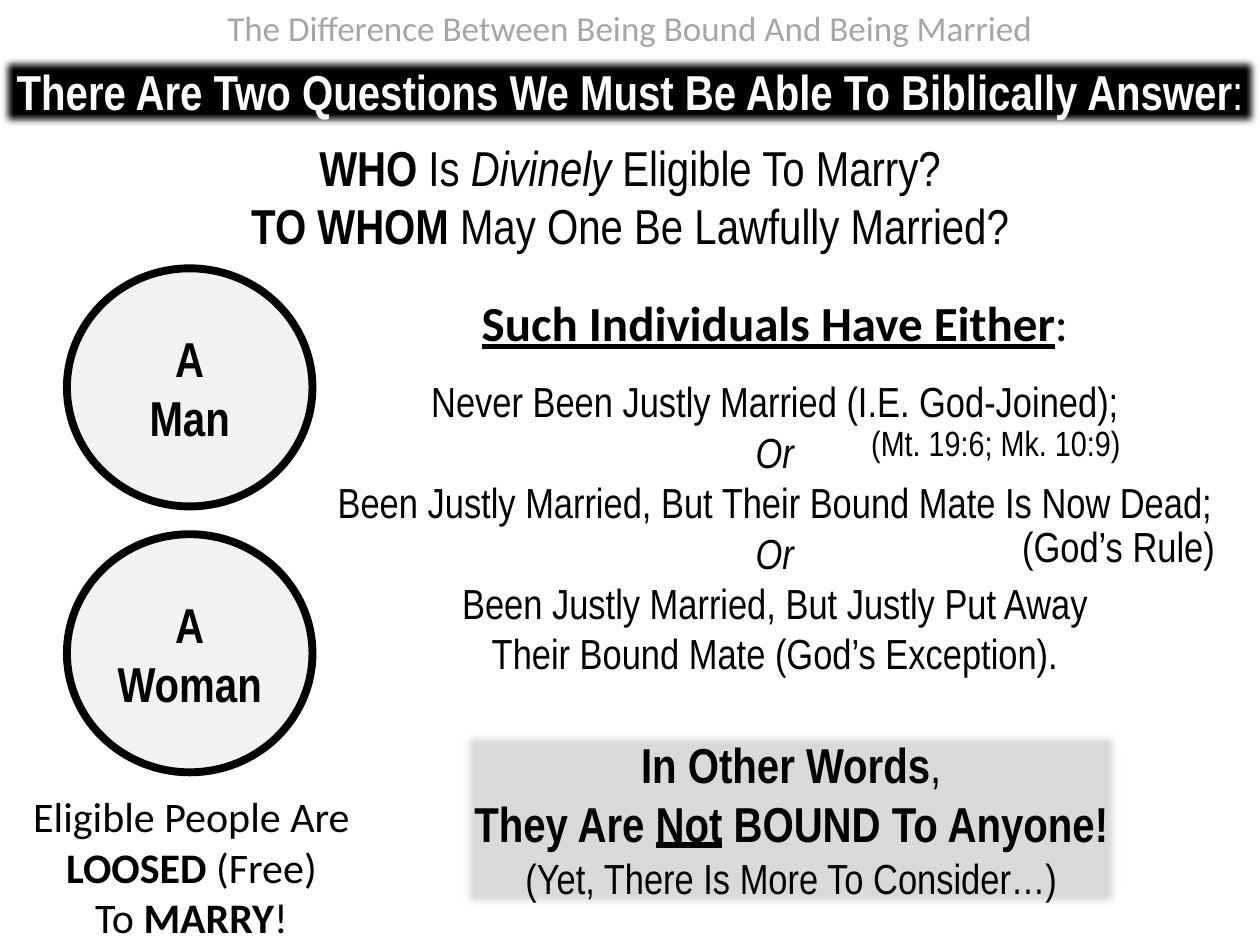
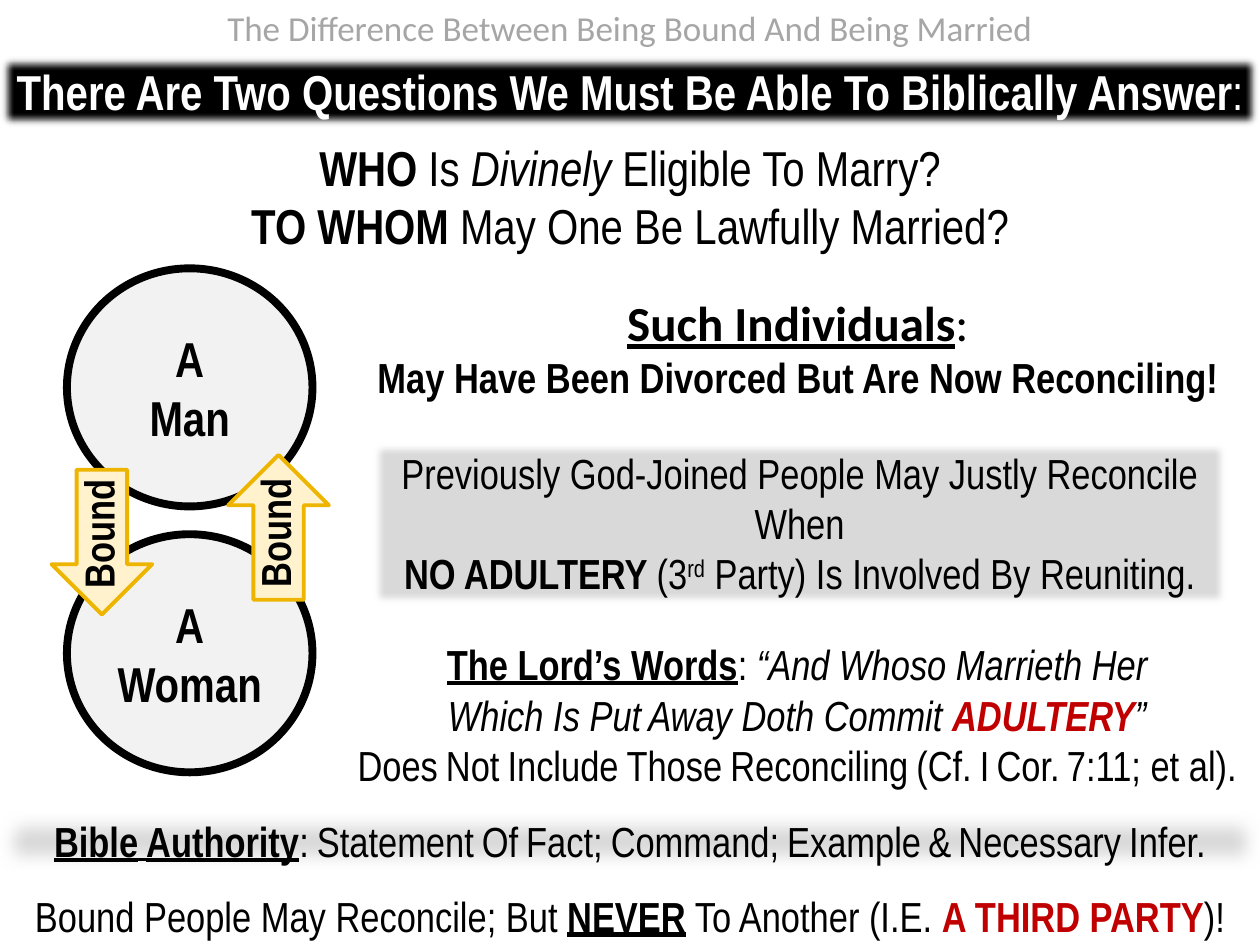
from pptx import Presentation
from pptx.dml.color import RGBColor
from pptx.enum.shapes import MSO_SHAPE
from pptx.enum.text import MSO_ANCHOR, PP_ALIGN
from pptx.oxml.ns import qn
from pptx.util import Cm, Pt
from lxml.etree import SubElement

WIDE, HIGH = 25.4, 19.05
BLACK, WHITE, RED = "000000", "FFFFFF", "C00000"
GRAY, MIST, PALE = "A6A6A6", "D9D9D9", "F2F2F2"
CREAM, GOLD = "FFF2CC", "EEB500"
NARROW, PLAIN = "Arial Narrow", "Calibri"
EDGE = 63500

# Formats a run can name by letter
MARKS = {
    "b": {"bold": True},
    "i": {"italic": True},
    "u": {"underline": True},
    "r": {"tint": RED},
    "h": {"size": 28, "name": PLAIN},
    "s": {"size": 24},
}


def color(code):
    return RGBColor.from_string(code)


def style(font, form):
    for key, value in form.items():
        if key == "tint":
            font.color.rgb = color(value)
        else:
            setattr(font, key, Pt(value) if key == "size" else value)


def add_run(para, text, form):
    for row, line in enumerate(text.split("\n")):
        if row:
            para.add_line_break()
        if line:
            run = para.add_run()
            run.text = line
            style(run.font, form)


def snug(text, gap, marks=""):
    """Split text into words joined by smaller spaces."""
    runs = []
    for word in text.split(" "):
        runs += [(" ", marks, gap), (word, marks)]
    return runs[1:]


def write(shape, paras, size=24, name=NARROW, tint=BLACK, align=PP_ALIGN.CENTER,
          mid=False, gap=0):
    frame = shape.text_frame
    frame.word_wrap = True
    frame.vertical_anchor = MSO_ANCHOR.MIDDLE if mid else MSO_ANCHOR.TOP
    for row, runs in enumerate(paras):
        para = frame.add_paragraph() if row else frame.paragraphs[0]
        para.alignment = align
        if row == 1 and gap:
            para.space_before = Pt(gap)
        for text, marks, *small in runs:
            form = {"size": size, "name": name, "tint": tint}
            for mark in marks:
                form.update(MARKS[mark])
            if small:
                form["size"] = small[0]
            add_run(para, text, form)


def label(slide, box, paras, **form):
    shape = slide.shapes.add_textbox(*map(Cm, box))
    write(shape, paras, **form)
    return shape


def block(slide, kind, box, fill=None, line=None, soft=0):
    shape = slide.shapes.add_shape(kind, *map(Cm, box))
    shape.shadow.inherit = False
    if fill:
        shape.fill.solid()
        shape.fill.fore_color.rgb = color(fill)
    else:
        shape.fill.background()
    if line:
        shape.line.color.rgb = color(line[0])
        shape.line.width = Pt(line[1])
    else:
        shape.line.fill.background()
    if soft:
        effects = shape._element.spPr.find(qn("a:effectLst"))
        SubElement(effects, qn("a:softEdge"), rad=str(soft))
    return shape


def panel(slide, box, paras, fill=None, kind=MSO_SHAPE.ROUNDED_RECTANGLE,
          soft=0, mid=True, **form):
    write(block(slide, kind, box, fill, soft=soft), paras, mid=mid, **form)


def card(slide, box, paras, fill=MIST, **form):
    panel(slide, box, paras, fill, MSO_SHAPE.RECTANGLE, EDGE, False, **form)


# Header, black band and the two questions
def heading(slide, left, top, wide):
    label(slide, (left, top, wide, 1.12),
          [[("The Difference Between Being Bound And Being Married", "")]],
          size=20, name=PLAIN, tint=GRAY)
    card(slide, (left, top + 1.12, wide, 1.45),
         [[("There Are Two Questions We Must Be Able To Biblically Answer", "b"),
           (":", "")]], fill=BLACK, size=28, tint=WHITE)
    label(slide, (left, top + 2.64, wide, 2.64), [
        [("WHO", "b"), (" Is ", ""), ("Divinely", "i"), (" Eligible To Marry?", "")],
        [("TO WHOM ", "b"), ("May One Be Lawfully Married?", "")],
    ], size=28)


# Man and woman circles
def couple(slide, left, top):
    for row, who in enumerate(("A\nMan", "A\nWoman")):
        ring = block(slide, MSO_SHAPE.OVAL, (left, top + row * 5.36, 4.95, 4.8),
                     PALE, (BLACK, 4.5))
        write(ring, [[(who, "b")]], size=28, mid=True)


# Arrow with its upright word
def bond(slide, left, top, turn, drop):
    arrow = block(slide, MSO_SHAPE.DOWN_ARROW, (left, top, 2.03, 2.92),
                  CREAM, (GOLD, 2.25))
    arrow.rotation = turn
    word = label(slide, (left - 2.52, top + drop, 6.91, 1.27), [[("Bound", "b")]])
    word.rotation = 270


# The three cases, with side notes
def cases(slide, left, top):
    panel(slide, (left, top, 20.98, 8.13), [
        [("Such Individuals Have Either", "hbu"), (":", "h")],
        [("Never Been Justly Married (I.E. God-Joined);", "")],
        [("Or\n", "i"),
         ("Been Justly Married, But Their Bound Mate Is Now Dead;\n", ""), ("Or", "i")],
        [("Been Justly Married, But Justly Put Away\n"
          "Their Bound Mate (God’s Exception).", "")],
    ], gap=14)
    notes = [(12.8, 4.64, "(God’s Rule)", 24), (10.9, 2.66, "(Mt. 19:6; Mk. 10:9)", 20)]
    for over, down, text, size in notes:
        label(slide, (left + over, top + down, 6.81, 1.2), [[(text, "")]],
              size=size, align=PP_ALIGN.RIGHT)


# Closing words of the first slide
def result(slide, left, top):
    panel(slide, (left, top + 1.35, 7.72, 2.87),
          [[("Eligible People Are\n", ""), ("LOOSED", "b"), (" (Free)\nTo ", ""),
            ("MARRY", "b"), ("!", "")]], name=PLAIN)
    card(slide, (left + 9.27, top, 13.36, 3.68), [[
        ("In Other Words", "b"), (",\n", ""), ("They Are ", "b"), ("Not", "bu"),
        (" BOUND To Anyone!\n", "b"), ("(Yet, There Is More To Consider…)", "s"),
    ]], size=28)


# Reconciling column of the second slide
def reunion(slide, left, top):
    panel(slide, (left, top, 18.97, 2.26),
          [[("Such Individuals", "hbu"), (":\n", "h"),
            ("May Have Been Divorced But Are Now Reconciling!", "b")]])
    card(slide, (left + 0.87, top + 3.02, 17.3, 3.33), [[
        ("Previously God-Joined People May Justly Reconcile\nWhen\n", ""),
        ("NO ADULTERY ", "b"), ("(3", ""), ("rd", ""),
        (" Party) Is Involved By Reuniting.", ""),
    ]])
    raised = slide.shapes[-1].text_frame.paragraphs[0].runs[-2]
    raised.font._element.set("baseline", "30000")
    label(slide, (left + 0.21, top + 6.88, 18.52, 3.33), [[
        ("The Lord’s Words", "bu"), (": ", ""),
        ("“And Whoso Marrieth Her\nWhich Is Put Away Doth Commit ", "i"),
        ("ADULTERY", "bir"), ("”\n", "i"),
        *snug("Does Not Include Those Reconciling (Cf. I", 20),
        (" ", "", 18), ("Cor.", ""), (" ", "", 18), ("7:11; et al).", ""),
    ]])


# Two lines across the foot
def footing(slide, left, top, wide):
    panel(slide, (left, top, wide, 1.14), [[
        *snug("Bible Authority", 20, "bu"), (":", ""), (" ", "", 20),
        *snug("Statement Of Fact; Command; Example", 20), (" ", "", 18),
        *snug("& Necessary", 18), (" ", "", 20), ("Infer.", ""),
    ]], MIST, soft=112500)
    panel(slide, (left, top + 1.5, wide, 1.14), [[
        ("Bound People May Reconcile; But ", ""), ("NEVER", "bu"),
        (" To Another (I.E. ", ""), ("A THIRD PARTY", "br"), (")!", ""),
    ]])


def start(deck):
    slide = deck.slides.add_slide(deck.slide_layouts[6])
    heading(slide, 0, 0, WIDE)
    couple(slide, 1.35, 5.41)
    return slide


def main():
    deck = Presentation()
    deck.slide_width, deck.slide_height = Cm(WIDE), Cm(HIGH)

    first = start(deck)
    cases(first, 5.13, 5.72)
    result(first, 0, 14.68)

    second = start(deck)
    reunion(second, 6.6, 5.87)
    footing(second, 0, 16.38, WIDE)
    bond(second, 4.6, 9.17, 180, 0.94)
    bond(second, 1.04, 9.47, 0, 0.66)

    deck.save("out.pptx")


if __name__ == "__main__":
    main()
